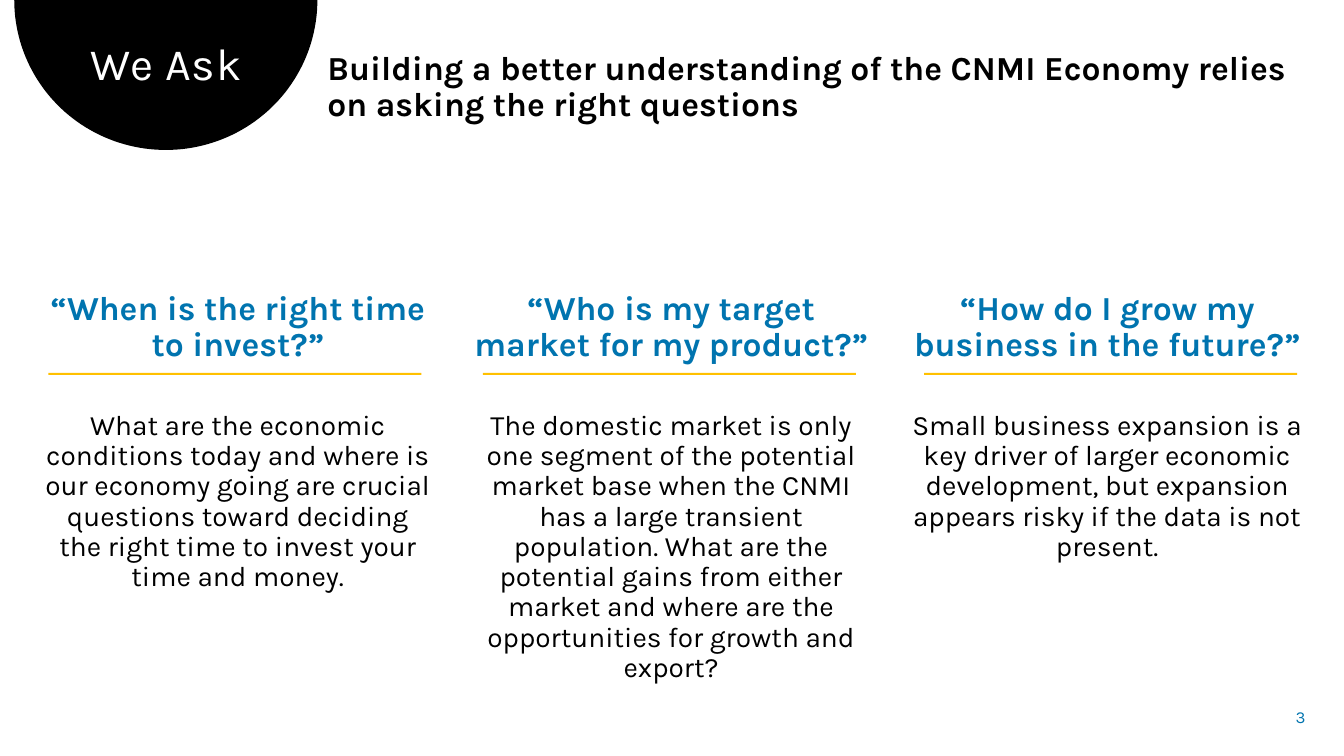
"""Build the "We Ask" slide: a title dome, a lead sentence and three question columns."""
import math

from pptx import Presentation
from pptx import util as u
from pptx.dml.color import RGBColor
from pptx.enum import shapes, text

COLORS = {"black": "000000", "white": "FFFFFF", "blue": "0074AF", "gold": "FFC000"}
FONT = "Karla"
TITLE = "We Ask"
LEAD = "Building a better understanding of the CNMI Economy relies on asking the right questions"
NUMBER = "3"
COLUMNS = [
    {"box": (0.84, 10.31, 7.92), "rule": 1.22,
     "question": "“When is the right time to invest?”",
     "answer": "What are the economic conditions today and where is our economy going are "
               "crucial questions toward deciding the right time to invest your time and money."},
    {"box": (11.58, 10.67, 9.47), "rule": 12.17,
     "question": "“Who is my target market for my product?”",
     "answer": "The domestic market is only one segment of the potential market base when the "
               "CNMI has a large transient population. What are the potential gains from either "
               "market and where are the opportunities for growth and export?"},
    {"box": (22.66, 10.49, 7.16), "rule": 23.29,
     "question": "“How do I grow my business in the future?”",
     "answer": "Small business expansion is a key driver of larger economic development, but "
               "expansion appears risky if the data is not present."},
]
COLUMN_TOP = 7.21
RULE_TOP, RULE_WIDTH, RULE_HEIGHT = 9.4, 9.4, 0.05
DOME = {"center": 4.18, "across": 3.82, "down": 3.78, "steps": 90}


def color(name):
    return RGBColor.from_string(COLORS[name])


def paint(shape, name):
    shape.shadow.inherit = False
    shape.fill.solid()
    shape.fill.fore_color.rgb = color(name)
    shape.line.fill.background()


def add_box(page, left, top, width, height, anchor="TOP"):
    box = page.shapes.add_textbox(*map(u.Cm, (left, top, width, height)))
    box.text_frame.word_wrap = True
    box.text_frame.vertical_anchor = text.MSO_ANCHOR[anchor]
    return box


def write(box, words, size=24, ink="black", bold=False, align="CENTER",
          line=0.9, before=0, after=0, tracking=None):
    frame = box.text_frame
    para = frame.add_paragraph() if frame.text else frame.paragraphs[0]
    para.alignment = text.PP_ALIGN[align]
    para.line_spacing = line
    para.space_before, para.space_after = u.Pt(before), u.Pt(after)
    span = para.add_run()
    span.text = words
    span.font.name, span.font.size, span.font.bold = FONT, u.Pt(size), bold
    span.font.color.rgb = color(ink)
    if tracking:
        span.font._element.set("spc", str(tracking))


def add_dome(page):
    steps = DOME["steps"]
    angles = [math.pi * step / steps for step in range(steps + 1)]
    points = [(u.Cm(DOME["center"] + DOME["across"] * math.cos(angle)),
               u.Cm(DOME["down"] * math.sin(angle))) for angle in angles]
    outline = page.shapes.build_freeform(*points[0])
    outline.add_line_segments(points[1:], close=True)
    paint(outline.convert_to_shape(), "black")


def add_column(page, column):
    left, width, height = column["box"]
    box = add_box(page, left, COLUMN_TOP, width, height)
    write(box, column["question"], ink="blue", bold=True, before=10, after=24)
    write(box, column["answer"], size=20, before=10, after=12)
    rule = page.shapes.add_shape(
        shapes.MSO_SHAPE.RECTANGLE,
        *map(u.Cm, (column["rule"], RULE_TOP, RULE_WIDTH, RULE_HEIGHT)))
    paint(rule, "gold")


def main():
    deck = Presentation()
    deck.slide_width, deck.slide_height = u.Cm(33.87), u.Cm(19.05)
    page = deck.slides.add_slide(deck.slide_layouts[6])
    add_dome(page)
    write(add_box(page, 0.89, 0.94, 6.6, 1.5), TITLE, size=32, ink="white", tracking=60)
    write(add_box(page, 8, 1.17, 25.22, 2.11), LEAD, bold=True, align="LEFT", before=10)
    for column in COLUMNS:
        add_column(page, column)
    write(add_box(page, 31.75, 17.55, 1.4, 1.02, anchor="MIDDLE"), NUMBER,
          size=12, ink="blue", align="RIGHT", line=1.0)
    deck.save("out.pptx")


if __name__ == "__main__":
    main()
